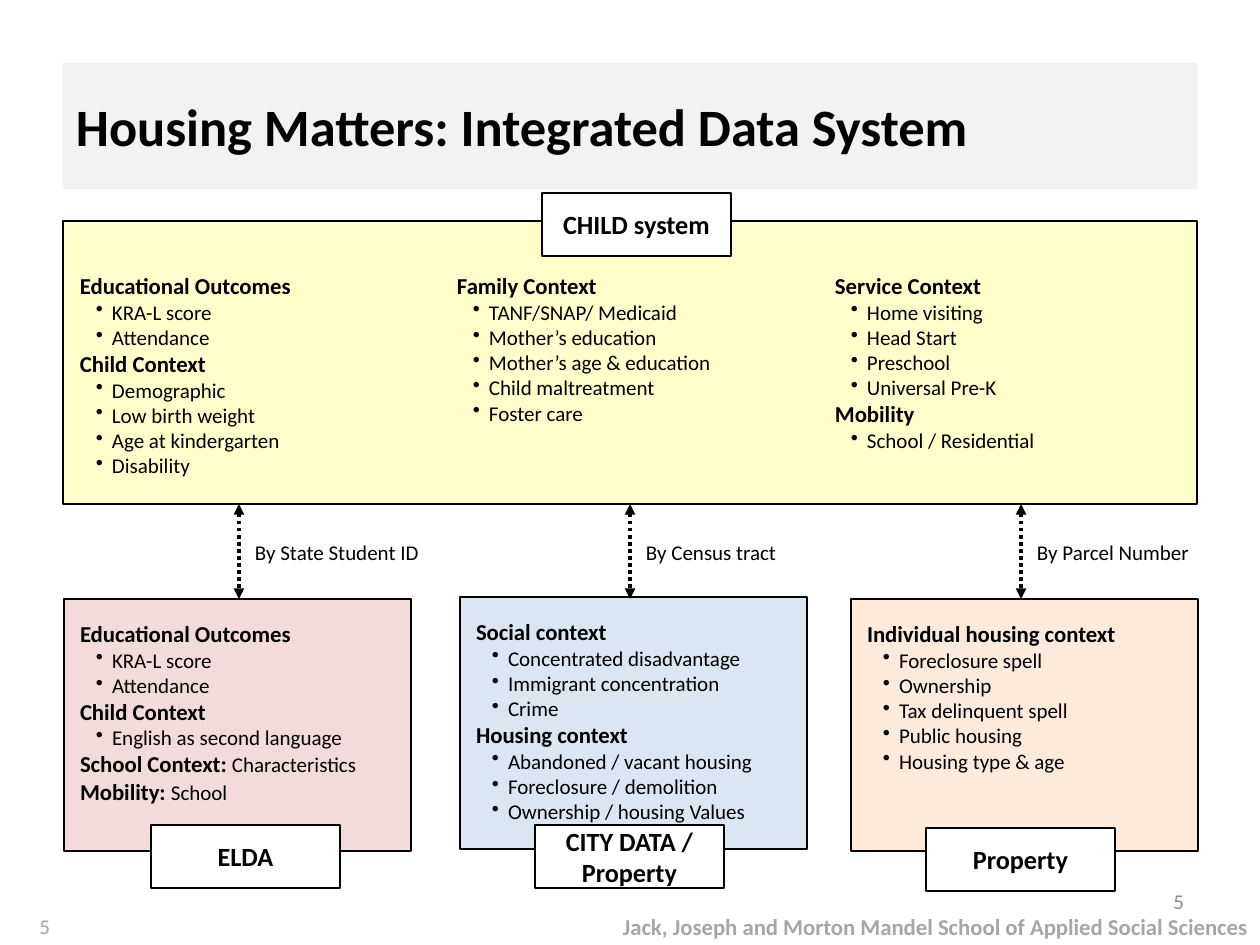
import pptx
import pptx.util
import pptx.dml.color
import pptx.enum.dml
import pptx.enum.shapes
import pptx.enum.text
import pptx.oxml.ns
import lxml.etree

EMU_PER_PIXEL = 914400 / 126
Align = pptx.enum.text.PP_ALIGN
Anchor = pptx.enum.text.MSO_ANCHOR
qn = pptx.oxml.ns.qn


def px(*lengths):
    return [round(length * EMU_PER_PIXEL) for length in lengths]


def add_box(place, lines=(), fill=None, line_width=0, size=12, bold=False,
            color="000000", align=Align.LEFT, insets=(0, 0)):
    """Rectangle with optional fill, outline and centred-height text."""
    shape = slide.shapes.add_shape(
        pptx.enum.shapes.MSO_SHAPE.RECTANGLE, *px(*place))
    shape.shadow.inherit = False
    shape.fill.background()
    if fill:
        shape.fill.solid()
        shape.fill.fore_color.rgb = pptx.dml.color.RGBColor.from_string(fill)
    shape.line.fill.background()
    if line_width:
        shape.line.color.rgb = pptx.dml.color.RGBColor.from_string("000000")
        shape.line.width = pptx.util.Pt(line_width)
    frame = shape.text_frame
    frame.word_wrap = True
    frame.vertical_anchor = Anchor.MIDDLE
    frame.margin_left, frame.margin_top = px(*insets)
    frame.margin_right, frame.margin_bottom = px(insets[0] if align == Align.RIGHT else 0, 0)
    for number, line in enumerate(lines):
        paragraph = frame.paragraphs[0] if number == 0 else frame.add_paragraph()
        paragraph.text = line
        paragraph.alignment = align
        paragraph.font.name = "Calibri"
        paragraph.font.size = pptx.util.Pt(size)
        paragraph.font.bold = bold
        paragraph.font.color.rgb = pptx.dml.color.RGBColor.from_string(color)
    return shape


presentation = pptx.Presentation()
presentation.slide_width, presentation.slide_height = px(1260, 945)
slide = presentation.slides.add_slide(presentation.slide_layouts[6])

# Footer and page numbers
add_box((504, 907, 756, 38),
        ["Jack, Joseph and Morton Mandel School of Applied Social Sciences"],
        size=13, bold=True, color="A6A6A6", align=Align.RIGHT, insets=(13, 0))
add_box((0, 907, 63, 38), ["5"], color="A6A6A6", align=Align.RIGHT, insets=(13, 0))
add_box((903, 876, 294, 50), ["5"], color="8C8C8C", align=Align.RIGHT, insets=(13, 0))

# Title
add_box((63, 63, 1134, 126), ["Housing Matters: Integrated Data System"],
        fill="F2F2F2", size=30, bold=True, insets=(13, 0))

# Context panels: place, fill, line width, top inset, (heading, plain text, bullets)
panels = [
    ((64, 221, 378, 283), "FFFFCC", 0, 51, [
        ("Educational Outcomes", "", ["KRA-L score", "Attendance"]),
        ("Child Context", "", ["Demographic", "Low birth weight",
                               "Age at kindergarten", "Disability"])]),
    ((441, 221, 378, 283), "FFFFCC", 0, 51, [
        ("Family Context", "", ["TANF/SNAP/ Medicaid", "Mother’s education",
                                "Mother’s age & education",
                                "Child maltreatment", "Foster care"])]),
    ((819, 221, 378, 283), "FFFFCC", 0, 51, [
        ("Service Context", "", ["Home visiting", "Head Start", "Preschool",
                                 "Universal Pre-K"]),
        ("Mobility", "", ["School / Residential"])]),
    ((64, 599, 347, 252), "F2DCDB", 0.75, 21, [
        ("Educational Outcomes", "", ["KRA-L score", "Attendance"]),
        ("Child Context", "", ["English as second language"]),
        ("School Context: ", "Characteristics", []),
        ("Mobility: ", "School", [])]),
    ((460, 597, 347, 252), "DCE6F2", 0.75, 21, [
        ("Social context", "", ["Concentrated disadvantage",
                                "Immigrant concentration", "Crime"]),
        ("Housing context", "", ["Abandoned / vacant housing",
                                 "Foreclosure / demolition",
                                 "Ownership / housing Values"])]),
    ((851, 599, 347, 252), "FDEADA", 0.75, 21, [
        ("Individual housing context", "", [
            "Foreclosure spell", "Ownership", "Tax delinquent spell",
            "Public housing", "Housing type & age"])]),
]
for place, fill, line_width, top_inset, sections in panels:
    lines = []
    for heading, plain, bullets in sections:
        lines += [(heading, plain, False)] + [("", bullet, True) for bullet in bullets]
    panel = add_box(place, [""] * len(lines), fill, line_width, insets=(16, top_inset))
    panel.text_frame.vertical_anchor = Anchor.TOP
    for paragraph, (heading, plain, bulleted) in zip(panel.text_frame.paragraphs, lines):
        if heading:
            run = paragraph.add_run()
            run.text = heading
            run.font.size = pptx.util.Pt(13)
            run.font.bold = True
        if plain:
            paragraph.add_run().text = plain
        if bulleted:
            properties = paragraph._p.get_or_add_pPr()
            margin, indent = px(32, -16)
            properties.set("marL", str(margin))
            properties.set("indent", str(indent))
            bullet = lxml.etree.Element(qn("a:buChar"), char="•")
            properties.find(qn("a:defRPr")).addprevious(bullet)

# Links between the upper and lower panels
links = [(239, "By State Student ID"), (630, "By Census tract"), (1021, "By Parcel Number")]
for x, label in links:
    add_box((x, 536, 189, 32), [label], insets=(16, 0))
    connector = slide.shapes.add_connector(
        pptx.enum.shapes.MSO_CONNECTOR.STRAIGHT, *px(x, 504, x, 599))
    connector.line.color.rgb = pptx.dml.color.RGBColor.from_string("000000")
    connector.line.width = pptx.util.Pt(2)
    connector.line.dash_style = pptx.enum.dml.MSO_LINE.ROUND_DOT
    line_element = connector.line._get_or_add_ln()
    for end in ("a:headEnd", "a:tailEnd"):
        lxml.etree.SubElement(line_element, qn(end), type="triangle")
    lxml.etree.SubElement(connector._element.spPr, qn("a:effectLst"))

# Outline around the three upper panels
add_box((63, 221, 1134, 283), line_width=0.75)

# Data system name tags
tags = [(542, 193, ["CHILD system"]), (151, 825, ["ELDA"]),
        (535, 825, ["CITY DATA /", "Property"]), (926, 828, ["Property"])]
for left, top, names in tags:
    add_box((left, top, 189, 63), names, "FFFFFF", 1.25, size=15, bold=True,
            align=Align.CENTER)

presentation.save("out.pptx")
